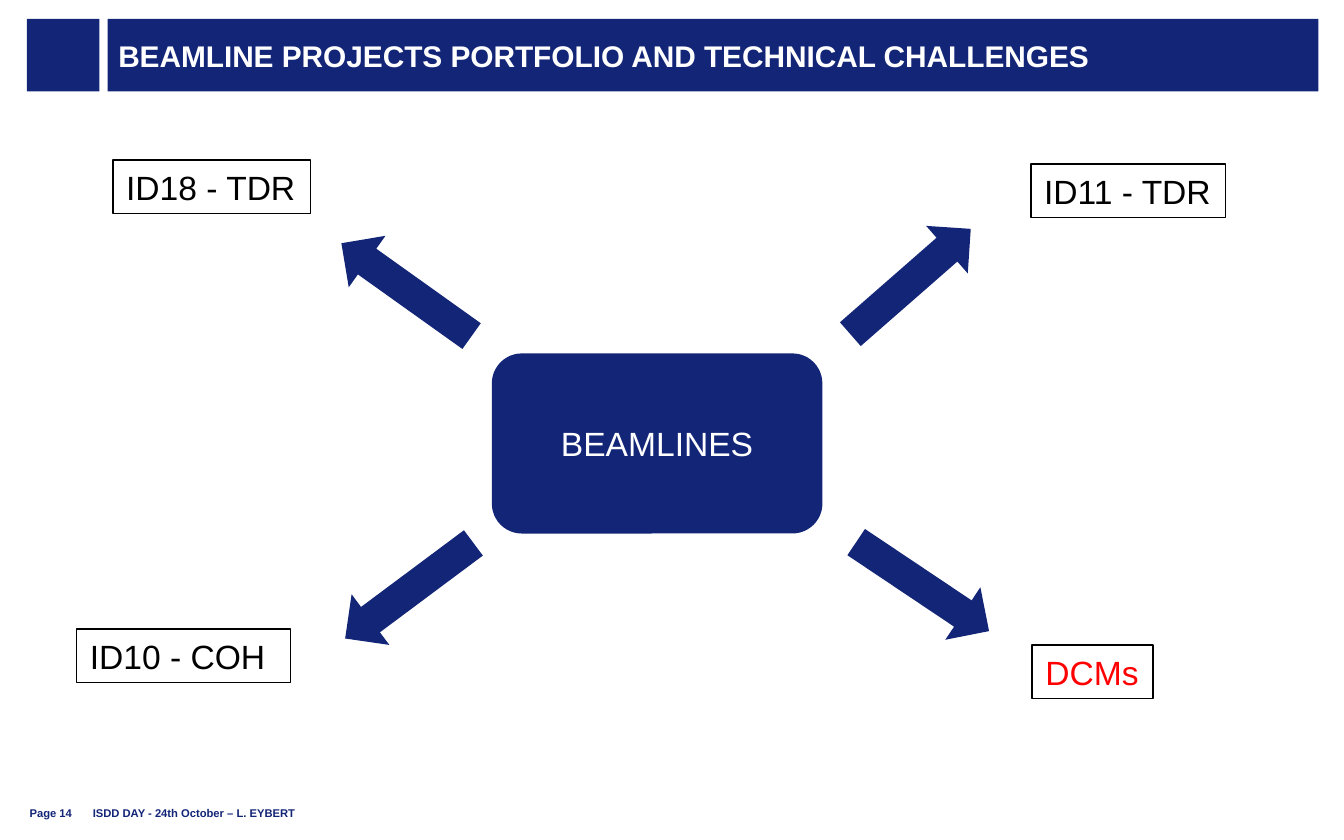
"""Build the beamline projects portfolio slide."""
from pptx import Presentation
from pptx.dml.color import RGBColor
from pptx.enum.shapes import MSO_SHAPE
from pptx.enum.text import MSO_ANCHOR, PP_ALIGN
from pptx.util import Inches, Pt

RECTANGLE = MSO_SHAPE.RECTANGLE
ROUNDED = MSO_SHAPE.ROUNDED_RECTANGLE
ARROW = MSO_SHAPE.RIGHT_ARROW
LEFT, CENTER = PP_ALIGN.LEFT, PP_ALIGN.CENTER
MIDDLE, BOTTOM = MSO_ANCHOR.MIDDLE, MSO_ANCHOR.BOTTOM

COLORS = {"navy": "132577", "white": "FFFFFF", "black": "000000", "red": "FF0000"}
FONT = "Arial"
TITLE = "BEAMLINE PROJECTS PORTFOLIO AND TECHNICAL CHALLENGES"
HUB = "BEAMLINES"
BAND_TOP, BAND_HEIGHT = 0.14, 0.54
ARROW_SIZE = (1.19, 0.47)
LABEL_HEIGHT = 0.4

FOOTERS = [("Page 14", 0.22, 0.45), ("ISDD DAY - 24th October – L. EYBERT", 0.69, 6.69)]
PROJECTS = [
    {"name": "ID11 - TDR", "color": "black", "label": (7.67, 1.22, 1.45), "arrow": (6.18, 1.86, 318.8)},
    {"name": "ID18 - TDR", "color": "black", "label": (0.84, 1.19, 1.47), "arrow": (2.43, 1.92, 215.5)},
    {"name": "ID10 - COH", "color": "black", "label": (0.57, 4.68, 1.59), "arrow": (2.45, 4.16, 143.3)},
    {"name": "DCMs", "color": "red", "label": (7.68, 4.8, 0.9), "arrow": (6.27, 4.13, 33.8)},
]


def rgb(name):
    return RGBColor.from_string(COLORS[name])


def add_block(page, kind, *place):
    block = page.shapes.add_shape(kind, *map(Inches, place))
    block.shadow.inherit = False
    block.fill.solid()
    block.fill.fore_color.rgb = rgb("navy")
    block.line.fill.background()
    return block


def write(box, text, size, color, bold=False, align=LEFT, anchor=MIDDLE, insets=(0.1, 0.05, 0.1, 0.05)):
    frame = box.text_frame
    frame.text = text
    frame.word_wrap = True
    frame.vertical_anchor = anchor
    frame.margin_left, frame.margin_top, frame.margin_right, frame.margin_bottom = map(Inches, insets)
    paragraph = frame.paragraphs[0]
    paragraph.alignment = align
    font = paragraph.runs[0].font
    font.name, font.size, font.bold = FONT, Pt(size), bold
    font.color.rgb = rgb(color)


def add_header(page):
    add_block(page, RECTANGLE, 0.2, BAND_TOP, BAND_HEIGHT, BAND_HEIGHT)
    title = page.shapes.title
    title.left, title.top, title.width, title.height = map(Inches, (0.8, BAND_TOP, 9.01, BAND_HEIGHT))
    title.fill.solid()
    title.fill.fore_color.rgb = rgb("navy")
    write(title, TITLE, 16, "white", bold=True, insets=(0.08, 0, 0.08, 0))


def add_project(page, project):
    left, top, angle = project["arrow"]
    arrow = add_block(page, ARROW, left, top, *ARROW_SIZE)
    arrow.rotation = angle
    label = add_block(page, RECTANGLE, *project["label"], LABEL_HEIGHT)
    label.fill.background()
    label.line.color.rgb = rgb("black")
    label.line.width = Pt(0.75)
    write(label, project["name"], 18, project["color"], insets=(0.1, 0.05, 0, 0.05))


def main():
    deck = Presentation()
    deck.slide_width, deck.slide_height = Inches(10), Inches(6.25)
    page = deck.slides.add_slide(deck.slide_layouts[5])
    add_header(page)
    for text, left, width in FOOTERS:
        footer = page.shapes.add_textbox(*map(Inches, (left, 5.91, width, 0.19)))
        write(footer, text, 6, "navy", bold=True, anchor=BOTTOM, insets=(0, 0, 0, 0))
    hub = add_block(page, ROUNDED, 3.66, 2.63, 2.46, 1.34)
    write(hub, HUB, 18, "white", align=CENTER)
    for project in PROJECTS:
        add_project(page, project)
    deck.save("out.pptx")


if __name__ == "__main__":
    main()
